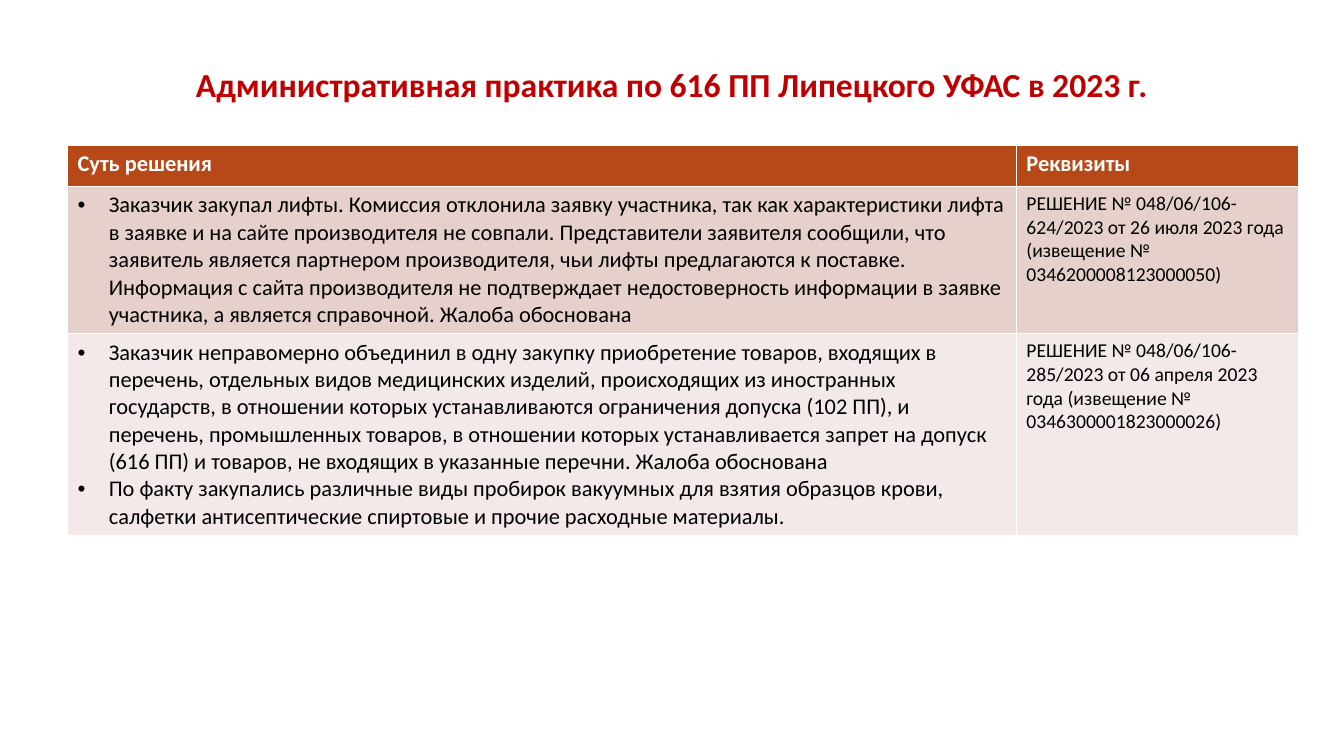
from lxml import etree
from pptx import Presentation
from pptx.dml.color import RGBColor
from pptx.enum.text import MSO_ANCHOR, PP_ALIGN
from pptx.oxml.ns import qn
from pptx.util import Inches, Pt

CENTER = PP_ALIGN.CENTER
MIDDLE = MSO_ANCHOR.MIDDLE

RED = RGBColor(0xC0, 0x00, 0x00)
RUST = RGBColor(0xB7, 0x49, 0x19)
ROSE = RGBColor(0xE6, 0xD0, 0xCC)
PALE = RGBColor(0xF3, 0xE9, 0xE8)
WHITE = RGBColor(0xFF, 0xFF, 0xFF)
BLACK = RGBColor(0x00, 0x00, 0x00)

TITLE = "Административная практика по 616 ПП Липецкого УФАС в 2023 г."
HEADS = ["Суть решения", "Реквизиты"]
CASES = [
    (
        [
            "Заказчик закупал лифты. Комиссия отклонила заявку участника, "
            "так как характеристики лифта в заявке и на сайте производителя "
            "не совпали. Представители заявителя сообщили, что заявитель "
            "является партнером производителя, чьи лифты предлагаются к "
            "поставке. Информация с сайта производителя не подтверждает "
            "недостоверность информации в заявке участника, а является "
            "справочной. Жалоба обоснована",
        ],
        "РЕШЕНИЕ № 048/06/106-624/2023 от 26 июля 2023 года "
        "(извещение № 0346200008123000050)",
    ),
    (
        [
            "Заказчик неправомерно объединил в одну закупку приобретение "
            "товаров, входящих в перечень, отдельных видов медицинских "
            "изделий, происходящих из иностранных государств, в отношении "
            "которых устанавливаются ограничения допуска (102 ПП), и "
            "перечень, промышленных товаров, в отношении которых "
            "устанавливается запрет на допуск (616 ПП) и товаров, не "
            "входящих в указанные перечни. Жалоба обоснована",
            "По факту закупались различные виды пробирок вакуумных для "
            "взятия образцов крови, салфетки антисептические спиртовые и "
            "прочие расходные материалы.",
        ],
        "РЕШЕНИЕ № 048/06/106-285/2023 от 06 апреля 2023 года "
        "(извещение № 0346300001823000026)",
    ),
]
COLS = [9.41, 2.8]
ROWS = [0.41, 1.46, 1.99]


def style(para, size, color, bold=False):
    for run in para.runs:
        font = run.font
        font.name = "Calibri"
        font.size = Pt(size)
        font.bold = bold
        font.color.rgb = color


def add_bullet(para):
    props = para._p.get_or_add_pPr()
    indent = Inches(0.31)
    props.set("marL", str(indent))
    props.set("indent", str(-indent))
    etree.SubElement(props, qn("a:buFont")).set("typeface", "Arial")
    etree.SubElement(props, qn("a:buChar")).set("char", "•")


def fill_cell(cell, lines, fill, size, color, bold=False, bullet=False):
    cell.fill.solid()
    cell.fill.fore_color.rgb = fill
    cell.text_frame.text = "\n".join(lines)
    for para in cell.text_frame.paragraphs:
        style(para, size, color, bold)
        if bullet:
            add_bullet(para)


def draw_title(slide, left, top, width, height):
    title = slide.shapes.title
    title.left, title.top = Inches(left), Inches(top)
    title.width, title.height = Inches(width), Inches(height)
    frame = title.text_frame
    frame.text = TITLE
    frame.vertical_anchor = MIDDLE
    para = frame.paragraphs[0]
    para.alignment = CENTER
    para.line_spacing = 0.9
    style(para, 24, RED, bold=True)


def draw_table(slide, left, top):
    table = slide.shapes.add_table(
        len(ROWS), len(COLS), Inches(left), Inches(top),
        Inches(sum(COLS)), Inches(sum(ROWS)),
    ).table
    for col, width in zip(table.columns, COLS):
        col.width = Inches(width)
    for row, height in zip(table.rows, ROWS):
        row.height = Inches(height)
    for col, head in enumerate(HEADS):
        fill_cell(table.cell(0, col), [head], RUST, 16, WHITE, bold=True)
    for row, (facts, ruling) in enumerate(CASES, 1):
        fill = ROSE if row % 2 else PALE
        fill_cell(table.cell(row, 0), facts, fill, 16, BLACK, bullet=True)
        fill_cell(table.cell(row, 1), [ruling], fill, 14, BLACK)


def main():
    deck = Presentation()
    deck.slide_width, deck.slide_height = Inches(13.33), Inches(7.5)
    slide = deck.slides.add_slide(deck.slide_layouts[5])
    draw_title(slide, 0.36, 0.13, 12.61, 1.45)
    draw_table(slide, 0.67, 1.44)
    deck.save("out.pptx")


if __name__ == "__main__":
    main()
